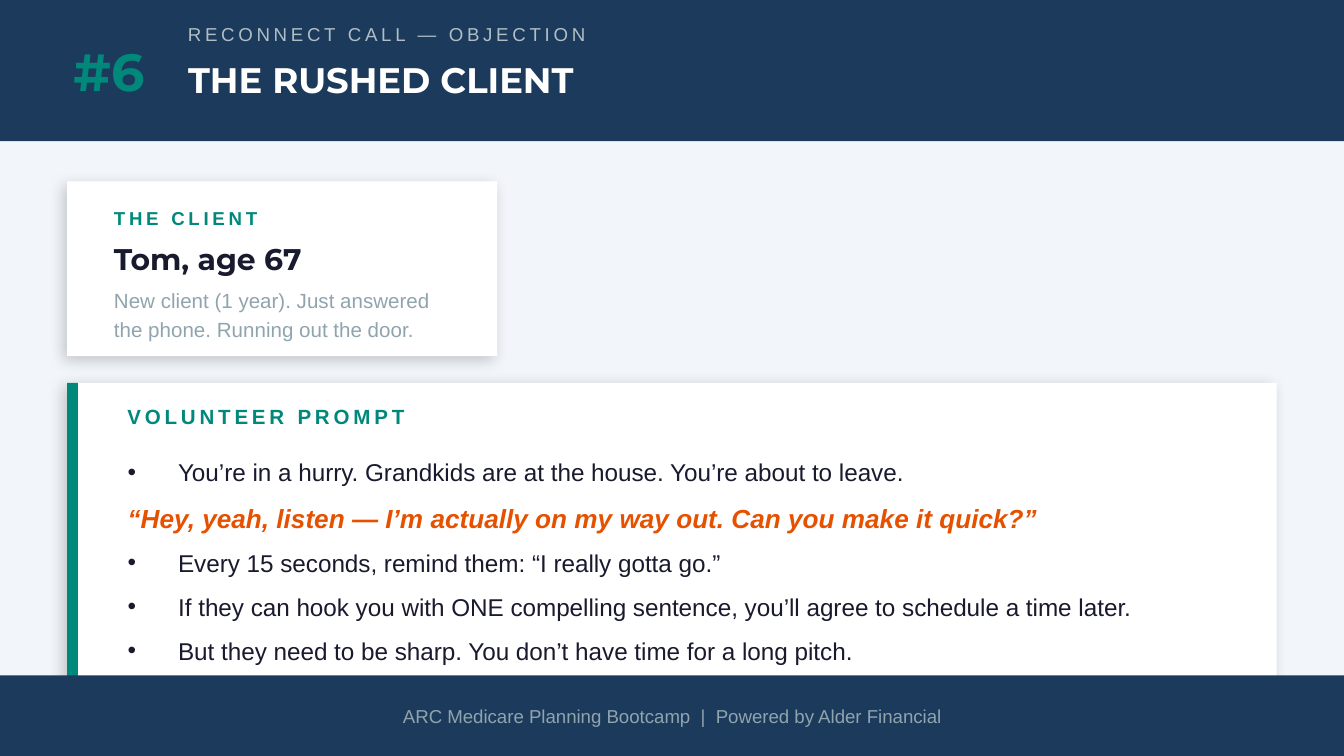
from dataclasses import dataclass

from lxml import etree
from pptx import Presentation
from pptx.dml.color import RGBColor
from pptx.enum.shapes import MSO_SHAPE
from pptx.enum.text import MSO_ANCHOR, MSO_AUTO_SIZE, PP_ALIGN
from pptx.oxml.ns import qn
from pptx.util import Emu, Inches, Pt

RECTANGLE = MSO_SHAPE.RECTANGLE
TOP, MIDDLE = MSO_ANCHOR.TOP, MSO_ANCHOR.MIDDLE
LEFT, CENTER = PP_ALIGN.LEFT, PP_ALIGN.CENTER
NO_AUTOFIT = MSO_AUTO_SIZE.NONE

COLORS = {
    "navy": "1B3A5C",
    "teal": "00897B",
    "mist": "F2F6FA",
    "white": "FFFFFF",
    "silver": "B0BEC5",
    "slate": "90A4AE",
    "ink": "1A1A2E",
    "orange": "E65100",
    "black": "000000",
}
WIDTH = Inches(10)
HEIGHT = Emu(WIDTH * 9 // 16)
COLUMN, ROW = WIDTH / 100, HEIGHT / 56.25
INDENT = Pt(27)


@dataclass(frozen=True)
class Area:
    column: float
    row: float
    columns: float
    rows: float

    def bounds(self) -> dict[str, Emu]:
        return {
            "left": Emu(round(self.column * COLUMN)),
            "top": Emu(round(self.row * ROW)),
            "width": Emu(round(self.columns * COLUMN)),
            "height": Emu(round(self.rows * ROW)),
        }


@dataclass(frozen=True)
class Style:
    size: float
    color: str
    name: str = "Arial"
    bold: bool = False
    italic: bool = False
    tracking: float = 0


@dataclass(frozen=True)
class Line:
    text: str
    style: Style
    alignment: PP_ALIGN = LEFT
    line_spacing: float = 1.0
    space_after: float = 0
    bullet: bool = False


@dataclass(frozen=True)
class Panel:
    area: Area
    color: str
    shadow: bool = False


@dataclass(frozen=True)
class Label:
    area: Area
    line: Line
    anchor: MSO_ANCHOR = MIDDLE


def set_attributes(target, values: dict) -> None:
    for name, value in values.items():
        setattr(target, name, value)


def rgb(color: str) -> RGBColor:
    return RGBColor.from_string(COLORS[color])


def add_shadow(shape) -> None:
    effects = shape.element.spPr.find(qn("a:effectLst"))
    shadow = etree.SubElement(effects, qn("a:outerShdw"), {
        "blurRad": str(Pt(8)), "dist": str(Pt(3)), "dir": str(135 * 60000),
        "algn": "bl", "rotWithShape": "0",
    })
    color = etree.SubElement(shadow, qn("a:srgbClr"), val=COLORS["black"])
    etree.SubElement(color, qn("a:alpha"), val="20000")


def add_panel(slide, panel: Panel) -> None:
    shape = slide.shapes.add_shape(RECTANGLE, **panel.area.bounds())
    shape.shadow.inherit = False
    shape.fill.solid()
    shape.fill.fore_color.rgb = rgb(panel.color)
    shape.line.fill.background()
    if panel.shadow:
        add_shadow(shape)


def write_line(paragraph, line: Line) -> None:
    properties = paragraph._p.get_or_add_pPr()
    properties.set("marL", str(INDENT if line.bullet else 0))
    properties.set("indent", str(-INDENT if line.bullet else 0))
    if line.bullet:
        etree.SubElement(properties, qn("a:buChar"), char="•")
    else:
        etree.SubElement(properties, qn("a:buNone"))
    set_attributes(paragraph, {
        "alignment": line.alignment,
        "line_spacing": line.line_spacing,
        "space_before": Pt(0),
        "space_after": Pt(line.space_after),
    })
    run = paragraph.add_run()
    run.text = line.text
    style = line.style
    set_attributes(run.font, {
        "name": style.name, "size": Pt(style.size),
        "bold": style.bold, "italic": style.italic,
    })
    run.font.color.rgb = rgb(style.color)
    if style.tracking:
        run.font._element.set("spc", str(round(style.tracking * 100)))


def write_text(shape, lines: list[Line], anchor: MSO_ANCHOR) -> None:
    frame = shape.text_frame
    set_attributes(frame, {
        "word_wrap": True, "auto_size": NO_AUTOFIT, "vertical_anchor": anchor,
    })
    for index, line in enumerate(lines):
        paragraph = frame.add_paragraph() if index else frame.paragraphs[0]
        write_line(paragraph, line)


def add_label(slide, label: Label) -> None:
    box = slide.shapes.add_textbox(**label.area.bounds())
    write_text(box, [label.line], label.anchor)


def fill_placeholder(placeholder, area: Area, lines: list[Line]) -> None:
    set_attributes(placeholder, area.bounds())
    write_text(placeholder, lines, TOP)
    placeholder.element.getparent().append(placeholder.element)


def prompt_line(text: str, style: Style, bullet: bool = True) -> Line:
    return Line(text, style, line_spacing=1.25, space_after=4, bullet=bullet)


HEADING = Style(19, "white", "Montserrat", bold=True)
PROMPT = Style(13, "ink")
QUOTE = Style(14, "orange", bold=True, italic=True)

PANELS = [
    Panel(Area(0, 0, 100, 10.5), "navy"),
    Panel(Area(5, 13.5, 32, 13), "white", shadow=True),
    Panel(Area(5, 28.5, 90, 24), "white", shadow=True),
    Panel(Area(5, 28.5, 0.8, 24), "teal"),
]
LABELS = [
    Label(Area(4.2, 1, 7.8, 8.5),
          Line("#6", Style(28, "teal", "Montserrat", bold=True), CENTER)),
    Label(Area(13, 1, 50, 3),
          Line("RECONNECT CALL — OBJECTION", Style(10, "silver", tracking=2))),
    Label(Area(7.5, 14.5, 27, 3.5),
          Line("THE CLIENT", Style(10, "teal", bold=True, tracking=2))),
    Label(Area(7.5, 17.5, 27, 3.5),
          Line("Tom, age 67", Style(16, "ink", "Montserrat", bold=True))),
    Label(Area(7.5, 21, 27, 4.5),
          Line("New client (1 year). Just answered the phone. Running out the door.",
               Style(11, "slate"), line_spacing=1.2)),
    Label(Area(8.5, 29.5, 40, 3),
          Line("VOLUNTEER PROMPT", Style(11, "teal", bold=True, tracking=2))),
]
PROMPTS = [
    prompt_line("You’re in a hurry. Grandkids are at the house. You’re about to leave.", PROMPT),
    prompt_line("“Hey, yeah, listen — I’m actually on my way out. Can you make it quick?”",
                QUOTE, bullet=False),
    prompt_line("Every 15 seconds, remind them: “I really gotta go.”", PROMPT),
    prompt_line("If they can hook you with ONE compelling sentence, "
                "you’ll agree to schedule a time later.", PROMPT),
    prompt_line("But they need to be sharp. You don’t have time for a long pitch.", PROMPT),
]
FOOTER_BAND = Panel(Area(0, 50.25, 100, 6), "navy")
FOOTER = Label(Area(5, 50.5, 90, 5.5),
               Line("ARC Medicare Planning Bootcamp  |  Powered by Alder Financial",
                    Style(10, "slate"), CENTER))


def main() -> None:
    presentation = Presentation()
    set_attributes(presentation, {"slide_width": WIDTH, "slide_height": HEIGHT})
    slide = presentation.slides.add_slide(presentation.slide_layouts[1])
    slide.background.fill.solid()
    slide.background.fill.fore_color.rgb = rgb("mist")
    for panel in PANELS:
        add_panel(slide, panel)
    for label in LABELS:
        add_label(slide, label)
    title, body = slide.shapes.title, slide.placeholders[1]
    fill_placeholder(title, Area(13, 3.8, 82, 6), [Line("THE RUSHED CLIENT", HEADING)])
    fill_placeholder(body, Area(8.5, 33, 83, 18), PROMPTS)
    add_panel(slide, FOOTER_BAND)
    add_label(slide, FOOTER)
    presentation.save("out.pptx")


if __name__ == "__main__":
    main()
